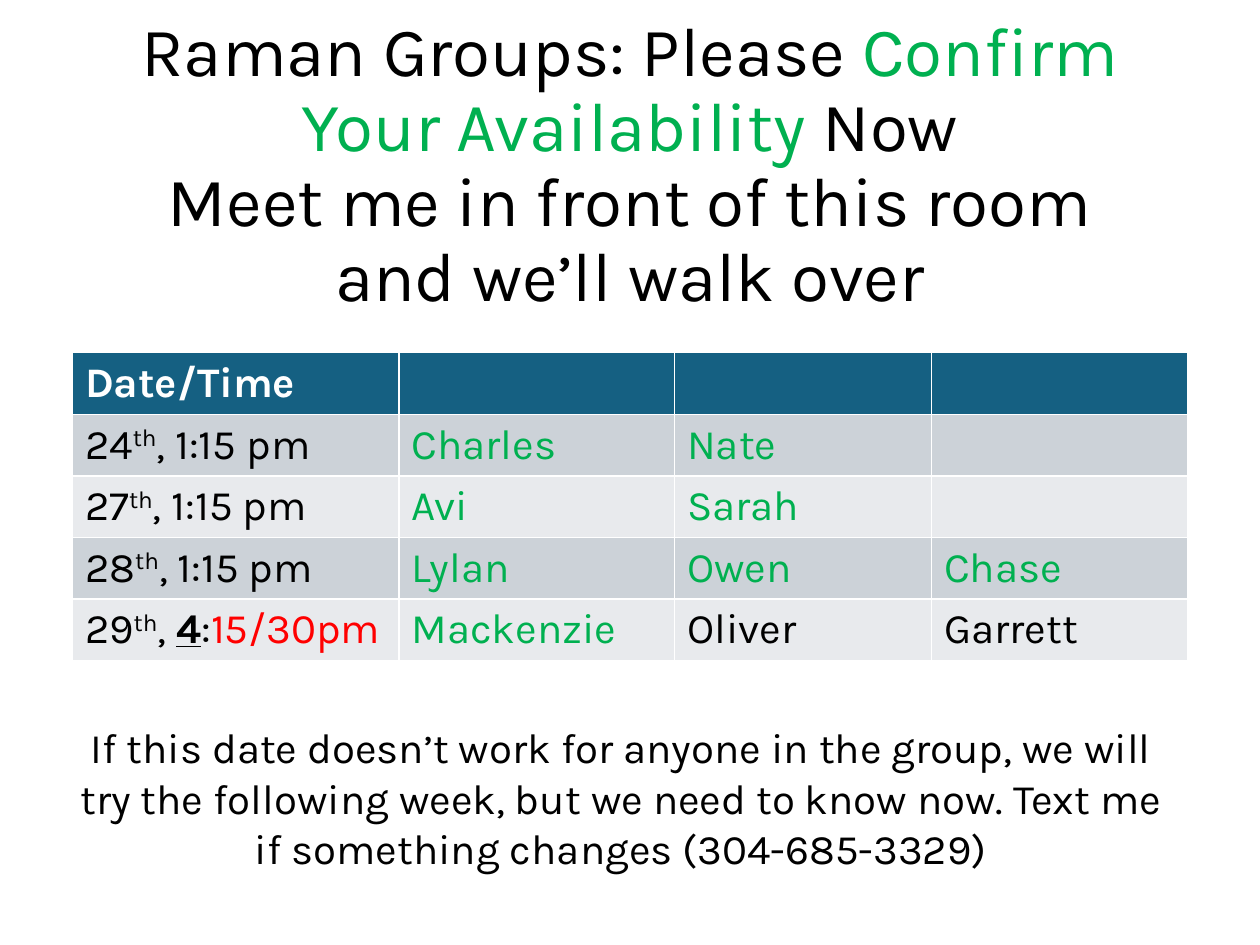
from pptx import Presentation
from pptx.dml.color import RGBColor as Rgb
from pptx.enum.text import MSO_ANCHOR as Anchor, MSO_AUTO_SIZE as Fit, PP_ALIGN as Align
from pptx.util import Cm, Pt

BLACK = Rgb(0x00, 0x00, 0x00)
WHITE = Rgb(0xFF, 0xFF, 0xFF)
GREEN = Rgb(0x00, 0xB0, 0x50)
RED = Rgb(0xFF, 0x00, 0x00)
HEAD = Rgb(0x15, 0x60, 0x82)
BANDS = Rgb(0xCC, 0xD2, 0xD8), Rgb(0xE8, 0xEA, 0xED)


class Page:
    """Holds the text style and the current slide."""

    font = "Karla"
    size = 24

    def __init__(self, deck):
        self.slide = deck.slides.add_slide(deck.slide_layouts[5])

    def run(self, para, text, color=BLACK, size=None, bold=False, line=False, lift=0):
        run = para.add_run()
        run.text = text
        font = run.font
        font.name, font.size = self.font, Pt(size or self.size)
        font.bold, font.underline = bold, line
        font.color.rgb = color
        if lift:
            font._element.set("baseline", str(lift * 1000))

    def place(self, shape, box):
        shape.left, shape.top, shape.width, shape.height = map(Cm, box)

    def title(self, box, lines, size):
        shape = self.slide.shapes.title
        self.place(shape, box)
        frame = shape.text_frame
        frame.auto_size, frame.word_wrap = Fit.NONE, True
        frame.vertical_anchor = Anchor.MIDDLE
        para = frame.paragraphs[0]
        para.alignment, para.line_spacing = Align.CENTER, 0.9
        for row, runs in enumerate(lines):
            if row:
                para.add_line_break()
            for text, color in runs:
                self.run(para, text, color, size)

    def table(self, box, widths, rows):
        shape = self.slide.shapes.add_table(len(rows), len(widths), *map(Cm, box))
        grid = shape.table
        for col, width in zip(grid.columns, widths):
            col.width = Cm(width)
        for r, row in enumerate(rows):
            for c, runs in enumerate(row):
                cell = grid.cell(r, c)
                cell.fill.solid()
                cell.fill.fore_color.rgb = BANDS[(r - 1) % 2] if r else HEAD
                for text, style in runs:
                    self.run(cell.text_frame.paragraphs[0], text, **style)

    def note(self, box, text):
        frame = self.slide.shapes.add_textbox(*map(Cm, box)).text_frame
        frame.word_wrap, frame.auto_size = True, Fit.SHAPE_TO_FIT_TEXT
        para = frame.paragraphs[0]
        para.alignment = Align.CENTER
        self.run(para, text)


def day(num, *time):
    return [(num, {}), ("th", {"lift": 30}), *time]


def name(text, color=GREEN):
    return [(text, {"color": color})]


def main():
    deck = Presentation()
    deck.slide_width, deck.slide_height = Cm(25.4), Cm(19.05)
    page = Page(deck)
    page.title((1.75, 1.52, 21.9, 3.68), [
        [("Raman Groups: Please ", BLACK), ("Confirm Your Availability", GREEN), (" Now", BLACK)],
        [("Meet me in front of this room and we’ll walk over", BLACK)],
    ], 39.6)

    noon = (", 1:15 pm", {})
    late = [(", ", {}), ("4", {"bold": True, "line": True}), (":", {}), ("15/30pm", {"color": RED})]
    page.table((1.46, 7.11, 22.48, 6.2), (6.58, 5.56, 5.18, 5.16), [
        [[("Date/Time", {"color": WHITE, "bold": True})], [], [], []],
        [day("24", noon), name("Charles"), name("Nate"), []],
        [day("27", noon), name("Avi"), name("Sarah"), []],
        [day("28", noon), name("Lylan"), name("Owen"), name("Chase")],
        [day("29", *late), name("Mackenzie"), name("Oliver", BLACK), name("Garrett", BLACK)],
    ])
    page.note((1.07, 14.43, 22.89, 3.33),
              "If this date doesn’t work for anyone in the group, we will try the following week, "
              "but we need to know now. Text me if something changes (304-685-3329)")
    deck.save("out.pptx")


if __name__ == "__main__":
    main()
